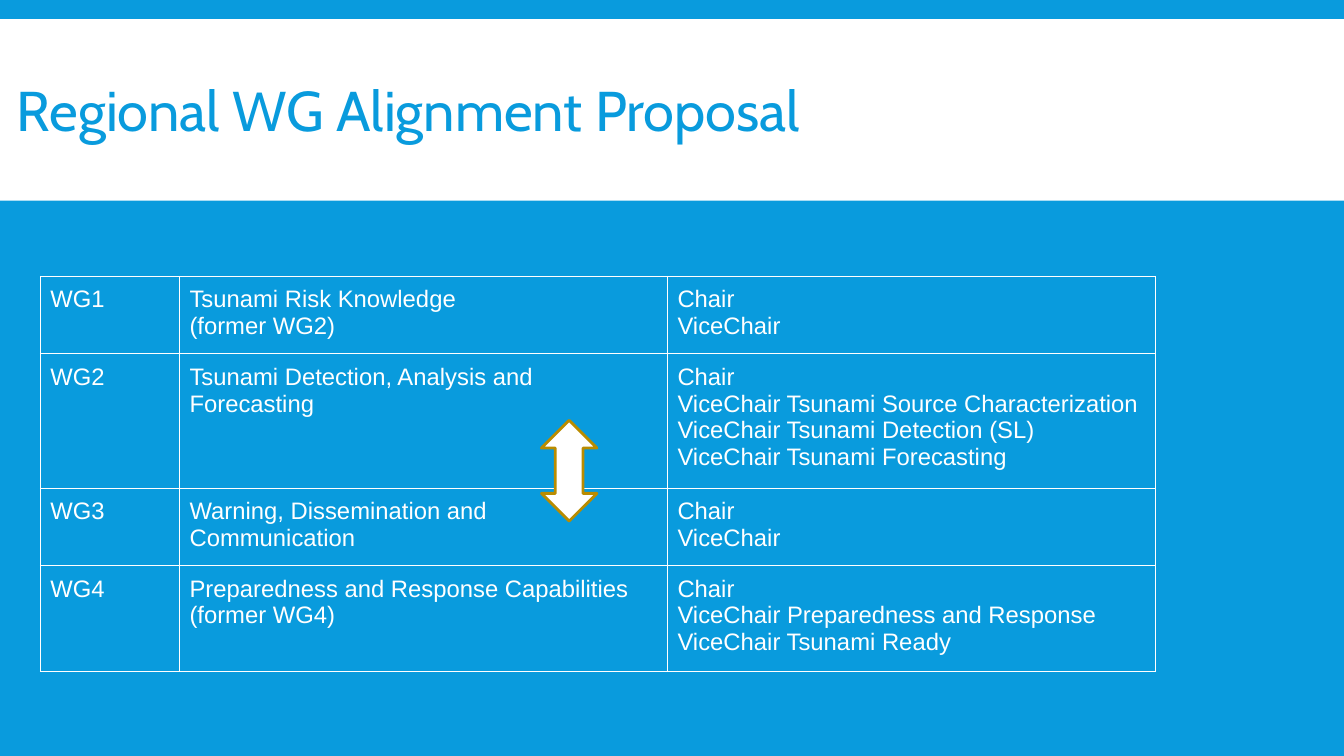
from pptx import Presentation
from pptx.dml.color import RGBColor
from pptx.enum.shapes import MSO_SHAPE
from pptx.enum.text import MSO_ANCHOR
from pptx.oxml import parse_xml
from pptx.util import Inches, Pt

BLUE, WHITE, GOLD = "099BDD", "FFFFFF", "BA8C00"
NS = "http://schemas.openxmlformats.org/drawingml/2006/main"


def paint(part, color):
    """Give a fill, or the fill of a line, one solid colour."""
    part.solid()
    part.fore_color.rgb = RGBColor.from_string(color)


def write(para, text, font, size, color):
    run = para.add_run()
    run.text = text
    run.font.name = font
    run.font.size = Pt(size)
    paint(run.font.fill, color)


deck = Presentation()
deck.slide_width, deck.slide_height = Inches(13.33), Inches(7.5)
wide = deck.slide_width
slide = deck.slides.add_slide(deck.slide_layouts[6])
paint(slide.background.fill, BLUE)
shapes = slide.shapes

# Title band
band = shapes.add_shape(MSO_SHAPE.RECTANGLE, 0, Inches(0.19), wide, Inches(1.8))
band.shadow.inherit = False
paint(band.fill, WHITE)
band.line.fill.background()

title = shapes.add_textbox(Inches(0.07), Inches(0.31), Inches(10.7), Inches(1.65))
frame = title.text_frame
frame.word_wrap = True
frame.vertical_anchor = MSO_ANCHOR.MIDDLE
frame.paragraphs[0].line_spacing = 0.85
write(frame.paragraphs[0], "Regional WG Alignment Proposal", "Cabin", 40, BLUE)

# Working groups: name, topic, officers
groups = [
    (["WG1"], ["Tsunami Risk Knowledge", "(former WG2)"], ["Chair", "ViceChair"]),
    (["WG2"], ["Tsunami Detection, Analysis and Forecasting"],
     ["Chair", "ViceChair Tsunami Source Characterization",
      "ViceChair Tsunami Detection (SL)", "ViceChair Tsunami Forecasting"]),
    (["WG3"], ["Warning, Dissemination and Communication"], ["Chair", "ViceChair"]),
    (["WG4"], ["Preparedness and Response Capabilities", "(former WG4)"],
     ["Chair", "ViceChair Preparedness and Response", "ViceChair Tsunami Ready"]),
]
cols = [1.38, 4.84, 4.84]
pad, step = 0.1, 0.265
rows = [2 * pad + step * len(group[2]) for group in groups]
table = shapes.add_table(len(rows), len(cols), Inches(0.4), Inches(2.74),
                         Inches(sum(cols)), Inches(sum(rows))).table
table.first_row = table.horz_banding = False
for col, width in zip(table.columns, cols):
    col.width = Inches(width)

for row, high, group in zip(table.rows, rows, groups):
    row.height = Inches(high)
    for cell, lines in zip(row.cells, group):
        cell.margin_left = cell.margin_right = Inches(pad)
        cell.margin_top = cell.margin_bottom = Inches(pad)
        frame = cell.text_frame
        for i, line in enumerate(lines):
            para = frame.add_paragraph() if i else frame.paragraphs[0]
            write(para, line, "Arial", 17, WHITE)
        props = cell._tc.get_or_add_tcPr()
        for side in ("lnL", "lnR", "lnT", "lnB"):
            props.append(parse_xml(
                f'<a:{side} xmlns:a="{NS}" w="{Pt(0.75)}"><a:solidFill>'
                f'<a:srgbClr val="{WHITE}"/></a:solidFill></a:{side}>'))
        cell.fill.background()

# Arrow between WG2 and WG3
arrow = shapes.add_shape(MSO_SHAPE.UP_DOWN_ARROW, Inches(5.37), Inches(4.17),
                         Inches(0.55), Inches(1))
arrow.shadow.inherit = False
paint(arrow.fill, WHITE)
paint(arrow.line.fill, GOLD)
arrow.line.width = Pt(2)

deck.save("out.pptx")
